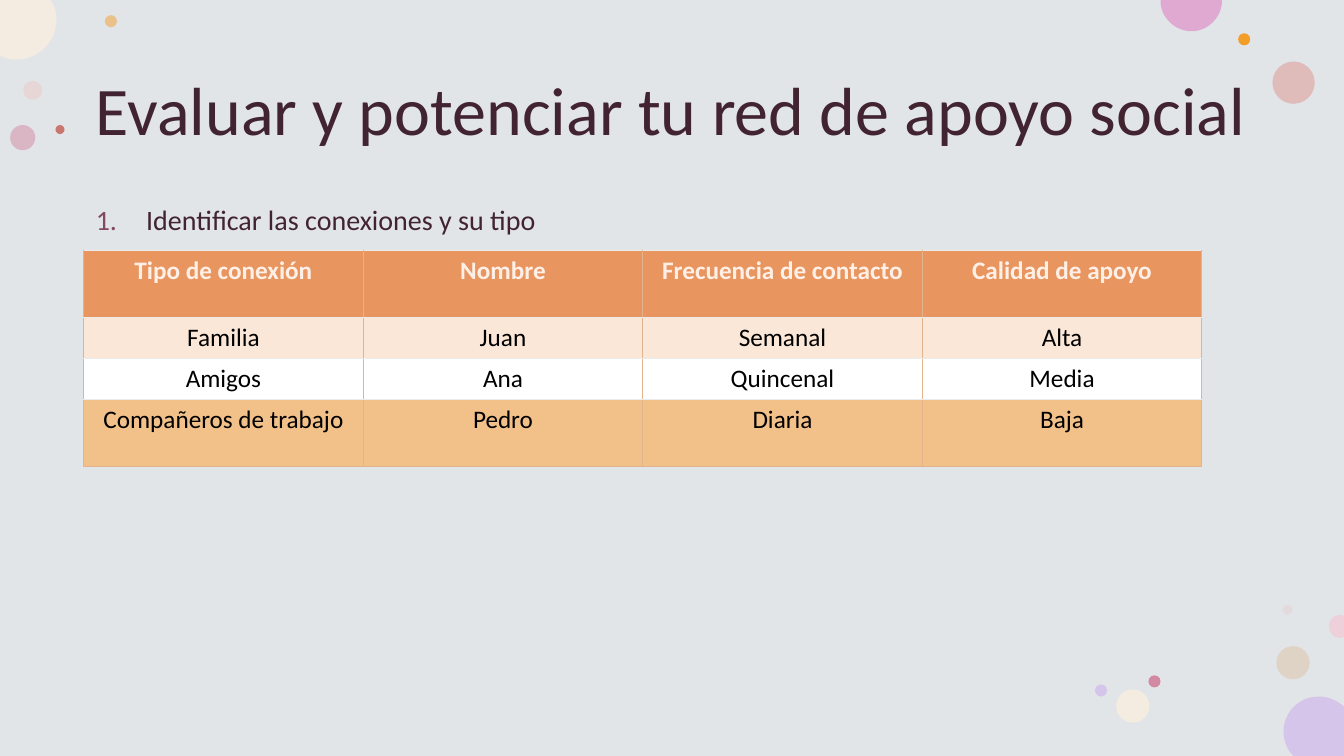
from lxml import etree
from pptx import Presentation
from pptx.dml.color import RGBColor
from pptx.enum.shapes import MSO_SHAPE
from pptx.enum.text import MSO_ANCHOR, MSO_AUTO_SIZE, PP_ALIGN
from pptx.oxml.ns import qn
from pptx.util import Inches, Pt

OVAL, RECTANGLE = MSO_SHAPE.OVAL, MSO_SHAPE.RECTANGLE
LEFT, CENTER = PP_ALIGN.LEFT, PP_ALIGN.CENTER
TOP, MIDDLE = MSO_ANCHOR.TOP, MSO_ANCHOR.MIDDLE
NO_AUTOFIT = MSO_AUTO_SIZE.NONE

SLIDE_WIDTH, SLIDE_HEIGHT = 13.33, 7.5
FONT = "Calibri"
PLUM = "412430"

DOTS = [
    (0.23, 0.8, 0.19, "EAC9C5", 50),
    (1.04, 0.15, 0.12, "F39E29", 50),
    (12.66, 6.41, 0.33, "DEC2A6", 50),
    (0.1, 1.24, 0.25, "D389A2", 50),
    (12.62, 0.61, 0.42, "DFADA9", 72),
    (12.28, 0.33, 0.12, "F39E29", 100),
    (12.72, 6, 0.1, "E3BEBE", 28),
    (11.39, 6.7, 0.12, "D389A2", 100),
    (11.07, 6.84, 0.33, "F4EBE1", 100),
    (10.86, 6.79, 0.12, "D5C5EA", 100),
    (0.55, 1.24, 0.09, "CA776F", 100),
]
EDGE_DOTS = [
    ("D5C5EA", (13.08, 6.91), [
        [(13.18, 6.91), (13.26, 6.95), (13.33, 7.01)],
        [(13.33, 7.5)], [(12.83, 7.5)], [(12.81, 7.48)],
        [(12.76, 7.42), (12.73, 7.34), (12.73, 7.26)],
        [(12.73, 7.06), (12.89, 6.91), (13.08, 6.91)]]),
    ("F4EBE1", (0, 0), [
        [(0.5, 0)], [(0.53, 0.05)],
        [(0.55, 0.09), (0.56, 0.14), (0.56, 0.2)],
        [(0.56, 0.41), (0.38, 0.59), (0.17, 0.59)],
        [(0.11, 0.59), (0.06, 0.58), (0.02, 0.56)],
        [(0, 0.55)]]),
    ("DFA9D1", (11.52, 0), [
        [(12.12, 0)], [(12.12, 0.01)],
        [(12.12, 0.17), (11.98, 0.31), (11.82, 0.31)],
        [(11.65, 0.31), (11.51, 0.17), (11.51, 0.01)]]),
    ("EDD0DA", (13.29, 6.1), [
        [(13.33, 6.11)], [(13.33, 6.32)], [(13.29, 6.33)],
        [(13.23, 6.33), (13.18, 6.28), (13.18, 6.21)],
        [(13.18, 6.15), (13.23, 6.1), (13.29, 6.1)]]),
]
CONNECTIONS = [
    ("Tipo de conexión", "Nombre", "Frecuencia de contacto", "Calidad de apoyo"),
    ("Familia", "Juan", "Semanal", "Alta"),
    ("Amigos", "Ana", "Quincenal", "Media"),
    ("Compañeros de trabajo", "Pedro", "Diaria", "Baja"),
]
ROW_HEIGHTS = [0.67, 0.38, 0.38, 0.67]
ROW_FILLS = ["E8955F", "FBE7D8", "FFFFFF", "F2C089"]
TABLE_WIDTH = 11.09
SIDE_BORDER, LEVEL_BORDER = "E2B48E", "EBEBEB"


def rgb(color):
    return RGBColor.from_string(color)


def paint(shape, color, opacity=100):
    shape.shadow.inherit = False
    shape.line.fill.background()
    shape.fill.solid()
    shape.fill.fore_color.rgb = rgb(color)
    if opacity < 100:
        tint = shape.fill._xPr.find(qn("a:solidFill"))[0]
        etree.SubElement(tint, qn("a:alpha"), val=str(opacity * 1000))


def add_backdrop(slide):
    backdrop = slide.shapes.add_shape(
        RECTANGLE, 0, 0, Inches(SLIDE_WIDTH), Inches(SLIDE_HEIGHT))
    paint(backdrop, "E2E5E8")
    slide.shapes._spTree.insert(2, backdrop._element)


def add_dot(slide, left, top, size, color, opacity):
    dot = slide.shapes.add_shape(
        OVAL, Inches(left), Inches(top), Inches(size), Inches(size))
    paint(dot, color, opacity)


def add_edge_dot(slide, color, start, segments):
    builder = slide.shapes.build_freeform(Inches(start[0]), Inches(start[1]))
    builder.add_line_segments(
        [(Inches(x), Inches(y)) for segment in segments for x, y in segment],
        close=True)
    edge_dot = builder.convert_to_shape()
    steps = iter(list(edge_dot._element.iter(qn("a:lnTo"))))
    for segment in segments:
        segment_steps = [next(steps) for _ in segment]
        if len(segment) == 3:
            curve = etree.Element(qn("a:cubicBezTo"))
            segment_steps[0].addprevious(curve)
            for step in segment_steps:
                curve.append(step[0])
                step.getparent().remove(step)
    paint(edge_dot, color)


def add_run(paragraph, text, size, color, bold=False):
    run = paragraph.add_run()
    run.text = text
    run.font.name = FONT
    run.font.size = Pt(size)
    run.font.bold = bold
    run.font.color.rgb = rgb(color)


def fill_placeholder(placeholder, top, height, anchor, text, size):
    placeholder.left, placeholder.top = Inches(0.85), Inches(top)
    placeholder.width, placeholder.height = Inches(11.66), Inches(height)
    frame = placeholder.text_frame
    frame.word_wrap = True
    frame.auto_size = NO_AUTOFIT
    frame.vertical_anchor = anchor
    paragraph = frame.paragraphs[0]
    paragraph.alignment = LEFT
    paragraph.line_spacing = 0.9
    add_run(paragraph, text, size, PLUM)
    return paragraph


def number_item(paragraph, color):
    paragraph.space_before = Pt(10)
    properties = paragraph._p.get_or_add_pPr()
    properties.set("marL", str(Inches(0.5)))
    properties.set("indent", str(Inches(-0.5)))
    bullet_color = etree.SubElement(properties, qn("a:buClr"))
    etree.SubElement(bullet_color, qn("a:srgbClr"), val=color)
    etree.SubElement(properties, qn("a:buFont"), typeface=FONT)
    etree.SubElement(properties, qn("a:buAutoNum"), type="arabicPeriod")


def add_border(cell, side, color):
    border = etree.SubElement(
        cell._tc.get_or_add_tcPr(), qn(f"a:ln{side}"), w=str(Pt(0.6)))
    fill = etree.SubElement(border, qn("a:solidFill"))
    etree.SubElement(fill, qn("a:srgbClr"), val=color)


def format_cell(cell, text, fill, is_header, is_last):
    add_border(cell, "L", SIDE_BORDER)
    add_border(cell, "R", SIDE_BORDER)
    add_border(cell, "T", LEVEL_BORDER)
    add_border(cell, "B", SIDE_BORDER if is_last else LEVEL_BORDER)
    cell.fill.solid()
    cell.fill.fore_color.rgb = rgb(fill)
    paragraph = cell.text_frame.paragraphs[0]
    paragraph.alignment = CENTER
    add_run(paragraph, text, 18, "FFF0E7" if is_header else "000000", is_header)


def add_connections(slide):
    row_count, column_count = len(CONNECTIONS), len(CONNECTIONS[0])
    table = slide.shapes.add_table(
        row_count, column_count, Inches(0.83), Inches(2.48),
        Inches(TABLE_WIDTH), Inches(sum(ROW_HEIGHTS))).table
    table.horz_banding = False
    for row, texts in enumerate(CONNECTIONS):
        table.rows[row].height = Inches(ROW_HEIGHTS[row])
        for column, text in enumerate(texts):
            format_cell(table.cell(row, column), text, ROW_FILLS[row],
                        row == 0, row == row_count - 1)


def main():
    presentation = Presentation()
    presentation.slide_width = Inches(SLIDE_WIDTH)
    presentation.slide_height = Inches(SLIDE_HEIGHT)
    slide = presentation.slides.add_slide(presentation.slide_layouts[1])
    add_backdrop(slide)
    for dot in DOTS:
        add_dot(slide, *dot)
    for edge_dot in EDGE_DOTS:
        add_edge_dot(slide, *edge_dot)
    fill_placeholder(slide.shapes.title, 0.4, 1.45, MIDDLE,
                     "Evaluar y potenciar tu red de apoyo social", 48.6)
    first_step = fill_placeholder(slide.placeholders[1], 2, 4.76, TOP,
                                  "Identificar las conexiones y su tipo", 20)
    number_item(first_step, "834861")
    add_connections(slide)
    presentation.save("out.pptx")


if __name__ == "__main__":
    main()
